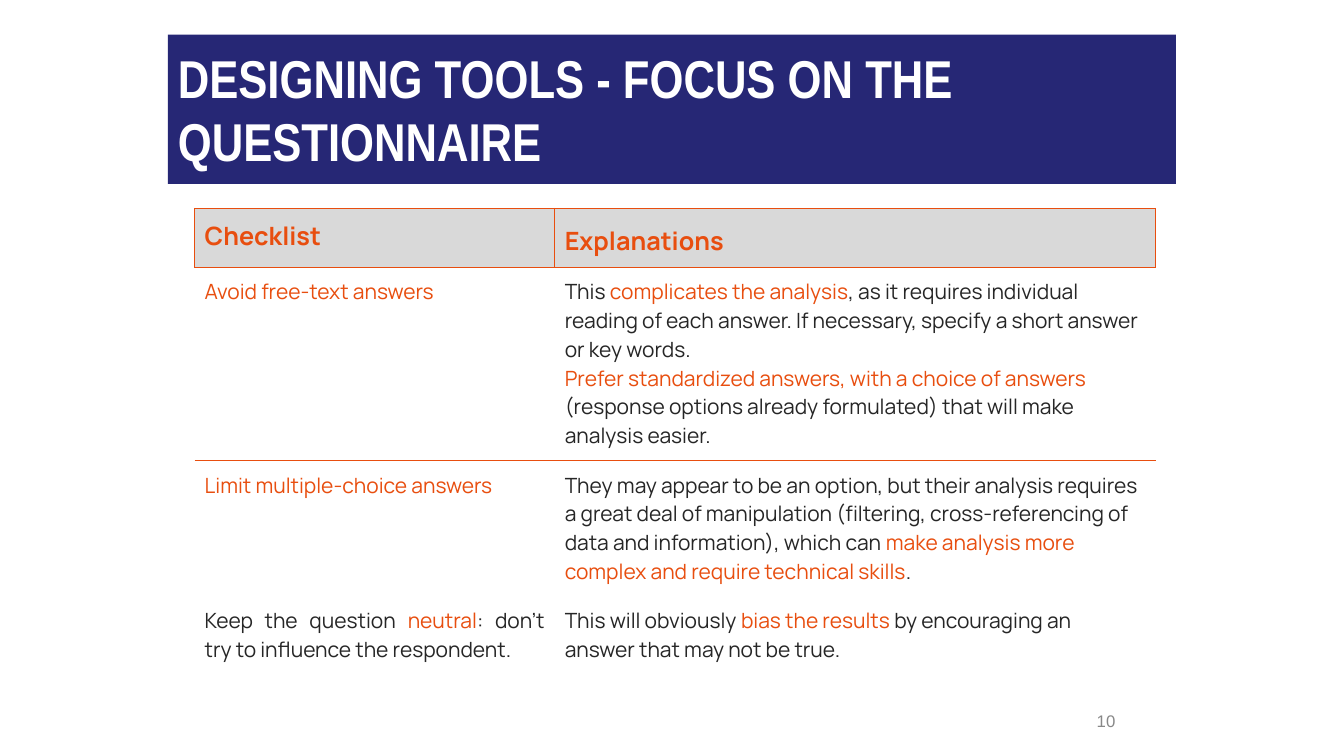
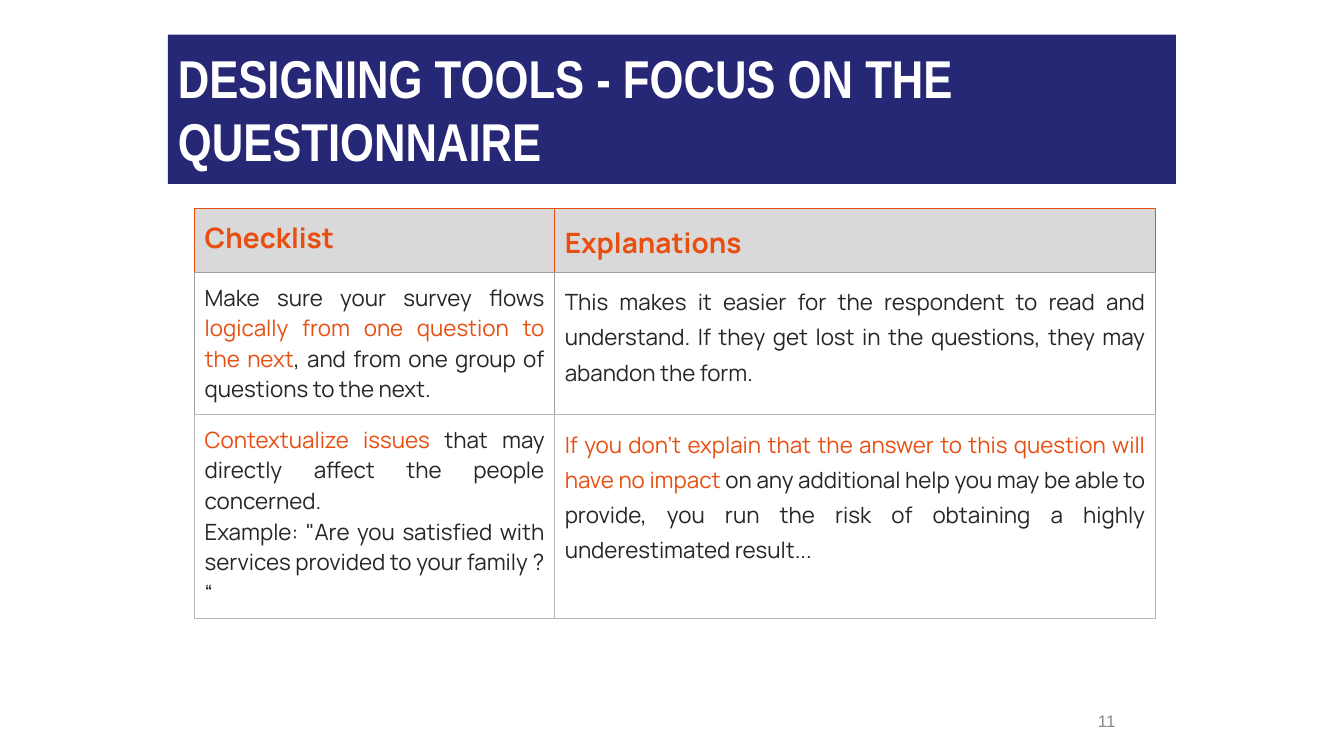
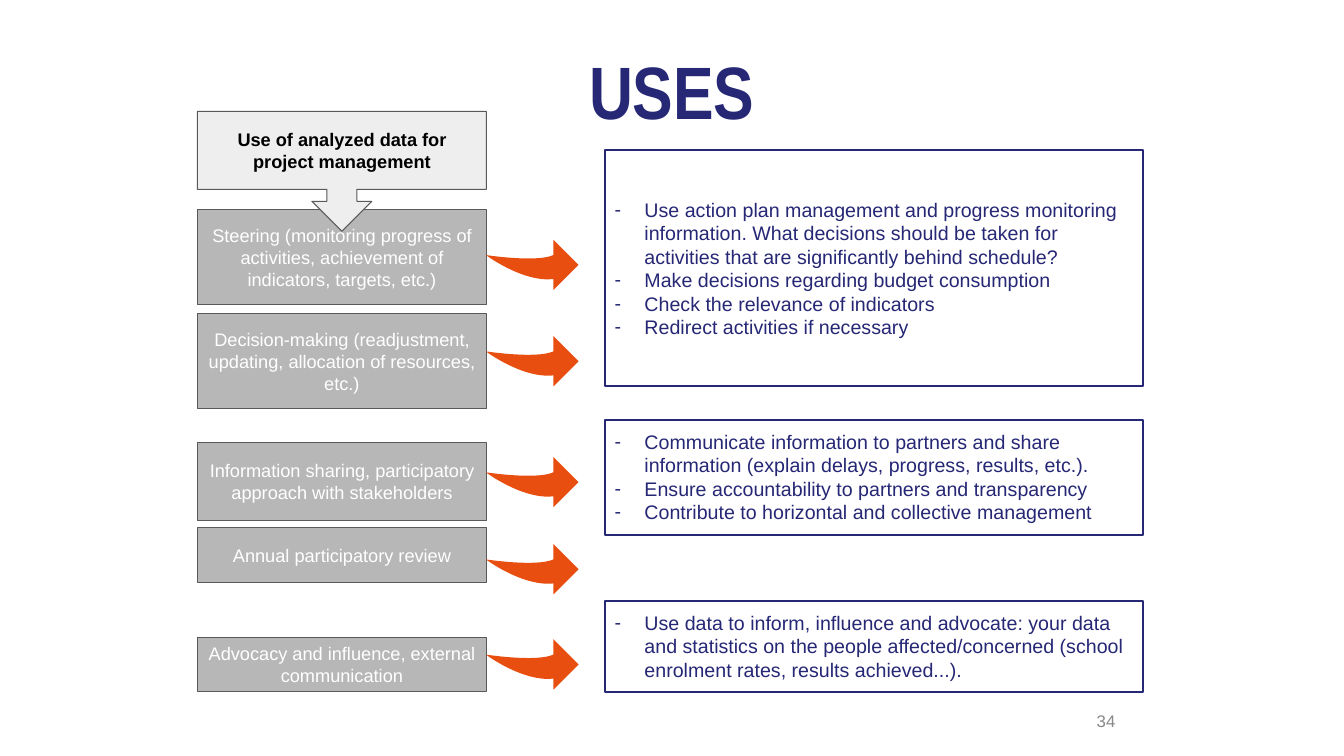
"""Build three training slides: two questionnaire checklists and a data uses chart."""
from dataclasses import dataclass
from typing import Optional

import pptx
import pptx.dml.color
import pptx.enum.shapes
import pptx.enum.text
import pptx.oxml
import pptx.oxml.ns
import pptx.util

Pt = pptx.util.Pt
ALIGN = pptx.enum.text.PP_ALIGN
ANCHOR = pptx.enum.text.MSO_ANCHOR
SHAPE = pptx.enum.shapes.MSO_SHAPE

COLORS = {
    "navy": "262775", "orange": "E84E0F", "white": "FFFFFF", "black": "000000",
    "text": "262626", "number": "888888", "header": "D9D9D9", "box": "B7B7B7",
    "callout": "EEEEEE", "outline": "595959", "rule": "9E9E9E",
}
MARGIN = 7.2
TITLE_LEFT, TITLE_TOP, TITLE_WIDTH = 120, 24.8, 720
TABLE_LEFT, TABLE_TOP, COLUMN_WIDTHS = 139, 148.7, (257.2, 429.3)
USE_LEFT, USE_WIDTH = 141, 206.4
ARROW_LEFT = 347.1
PANEL_LEFT, PANEL_WIDTH = 432, 384.5
BULLET_INDENT = 21.3
CHECKLIST_TITLE = "DESIGNING TOOLS - FOCUS ON THE QUESTIONNAIRE"


@dataclass(frozen=True)
class Cell:
    """Table cell whose paragraphs put accented words between bars."""
    paragraphs: tuple[str, ...]
    align: ALIGN = ALIGN.LEFT
    spacing: float = 1.0


@dataclass(frozen=True)
class Row:
    """Table row with the colour names of its rules."""
    height: float
    cells: tuple[Cell, Cell]
    top: Optional[str] = None
    bottom: Optional[str] = None
    sides: Optional[str] = None


@dataclass(frozen=True)
class Checklist:
    """Checklist slide content."""
    number: int
    header_size: float
    header_height: float
    body_size: float
    header_bottom: str
    rows: tuple[Row, ...]


@dataclass(frozen=True)
class Use:
    """Use of data with the top of its arrow."""
    text: str
    top: float
    height: float
    arrow_top: float


@dataclass(frozen=True)
class Panel:
    """Outlined list of actions."""
    top: float
    height: float
    items: tuple[str, ...]
    anchor: ANCHOR = ANCHOR.TOP


CHECKLISTS = (
    Checklist(10, 18, 42.4, 15, "orange", (
        Row(138, (
            Cell(("|Avoid free-text answers",)),
            Cell(("This |complicates the analysis|, as it requires individual reading of each answer. "
                  "If necessary, specify a short answer or key words.",
                  "|Prefer standardized answers, with a choice of answers |(response options already "
                  "formulated) that will make analysis easier."))),
            top="orange", bottom="orange"),
        Row(96.8, (
            Cell(("|Limit multiple-choice answers",)),
            Cell(("They may appear to be an option, but their analysis requires a great deal of manipulation "
                  "(filtering, cross-referencing of data and information), which can "
                  "|make analysis more complex and require technical skills|.",))),
            top="orange"),
        Row(55.6, (
            Cell(("Keep the question |neutral|: don't try to influence the respondent.",), ALIGN.JUSTIFY),
            Cell(("This will obviously |bias the results |by encouraging an answer that may not be true.",)))),
    )),
    Checklist(11, 20, 45.8, 16, "rule", (
        Row(101.6, (
            Cell(("Make sure your survey flows |logically from one question to the next|, "
                  "and from one group of questions to the next.",), ALIGN.JUSTIFY),
            Cell(("This makes it easier for the respondent to read and understand. If they get lost "
                  "in the questions, they may abandon the form.",), ALIGN.JUSTIFY, 1.15)),
            top="rule", bottom="box", sides="rule"),
        Row(145.7, (
            Cell(("|Contextualize issues |that may directly affect the people concerned.",
                  'Example: "Are you satisfied with services provided to your family ? “'), ALIGN.JUSTIFY),
            Cell(("|If you don't explain that the answer to this question will have no impact |on any "
                  "additional help you may be able to provide, you run the risk of obtaining a highly "
                  "underestimated result...",), ALIGN.JUSTIFY, 1.15)),
            top="box", bottom="box", sides="box"),
    )),
)

USES = (
    Use("Steering (monitoring progress of activities, achievement of indicators, targets, etc.)",
        149.8, 67.7, 171.2),
    Use("Decision-making (readjustment, updating, allocation of resources, etc.)", 224, 67.7, 240),
    Use("Information sharing, participatory approach with stakeholders", 316.2, 55.5, 326.4),
    Use("Annual participatory review", 377.1, 38.9, 388.6),
    Use("Advocacy and influence, external communication", 455.2, 38.9, 456.6),
)

PANELS = (
    Panel(107.3, 168.5, (
        "Use action plan management and progress monitoring information. What decisions should be taken "
        "for activities that are significantly behind schedule?",
        "Make decisions regarding budget consumption",
        "Check the relevance of indicators",
        "Redirect activities if necessary",
    ), ANCHOR.MIDDLE),
    Panel(299.8, 82.2, (
        "Communicate information to partners and share information (explain delays, progress, results, etc.).",
        "Ensure accountability to partners and transparency",
        "Contribute to horizontal and collective management",
    )),
    Panel(429.1, 65.5, (
        "Use data to inform, influence and advocate: your data and statistics on the people "
        "affected/concerned (school enrolment rates, results achieved...).",
    )),
)


def rgb(name: str) -> pptx.dml.color.RGBColor:
    """Return the named colour."""
    return pptx.dml.color.RGBColor.from_string(COLORS[name])


def add_xml(parent, tag: str, **attributes: str):
    """Append a drawing element to the parent and return it."""
    child = parent.makeelement(pptx.oxml.ns.qn(tag), attributes)
    parent.append(child)
    return child


def write_text(frame, paragraphs: tuple[str, ...], *, size: float, color: str, font: str = "Arial",
               bold: bool = False, align: ALIGN = ALIGN.LEFT, spacing: float = 1.0,
               accent: str = "orange", bullet: Optional[str] = None) -> None:
    """Write paragraphs, giving the words between bars the accent colour."""
    frame.word_wrap = True
    for index, text in enumerate(paragraphs):
        para = frame.add_paragraph() if index else frame.paragraphs[0]
        para.alignment = align
        para.line_spacing = spacing
        if bullet:
            properties = para._p.get_or_add_pPr()
            properties.set("marL", str(Pt(BULLET_INDENT)))
            properties.set("indent", str(-Pt(BULLET_INDENT)))
            add_xml(add_xml(properties, "a:buClr"), "a:srgbClr", val=COLORS[color])
            add_xml(properties, "a:buFont", typeface=font)
            add_xml(properties, "a:buChar", char=bullet)
        for position, words in enumerate(text.split("|")):
            if not words:
                continue
            span = para.add_run()
            span.text = words
            span.font.name = font
            span.font.size = Pt(size)
            span.font.bold = bold
            span.font.color.rgb = rgb(accent if position % 2 else color)


def set_margins(target, horizontal: float = MARGIN, vertical: float = MARGIN) -> None:
    """Set the inner margins of a text frame or table cell."""
    target.margin_left = target.margin_right = Pt(horizontal)
    target.margin_top = target.margin_bottom = Pt(vertical)


def style_shape(shape, fill: Optional[str], line: Optional[str], width: float = 0.75) -> None:
    """Set fill and line, without shadow."""
    shape.shadow.inherit = False
    if fill:
        shape.fill.solid()
        shape.fill.fore_color.rgb = rgb(fill)
    else:
        shape.fill.background()
    if line:
        shape.line.color.rgb = rgb(line)
        shape.line.width = Pt(width)
    else:
        shape.line.fill.background()


def add_box(page, left: float, top: float, width: float, height: float, paragraphs: tuple[str, ...], *,
            kind: Optional[SHAPE] = SHAPE.RECTANGLE, fill: Optional[str] = None, line: Optional[str] = None,
            line_width: float = 0.75, anchor: ANCHOR = ANCHOR.MIDDLE, **text_format):
    """Add a shape holding text, or a text box if it has no kind, and return it."""
    place = Pt(left), Pt(top), Pt(width), Pt(height)
    box = page.shapes.add_shape(kind, *place) if kind else page.shapes.add_textbox(*place)
    style_shape(box, fill, line, line_width)
    set_margins(box.text_frame)
    box.text_frame.vertical_anchor = anchor
    write_text(box.text_frame, paragraphs, **text_format)
    return box


def add_page(deck, number: int, title: str, *, height: float, size: float, color: str,
             kind: Optional[SHAPE] = None, fill: Optional[str] = None, align: ALIGN = ALIGN.LEFT):
    """Add a blank page with its title and number."""
    page = deck.slides.add_slide(deck.slide_layouts[6])
    add_box(page, TITLE_LEFT, TITLE_TOP, TITLE_WIDTH, height, (title,), kind=kind, fill=fill,
            anchor=ANCHOR.TOP, size=size, color=color, font="Arial Narrow", bold=True, align=align)
    number_box = add_box(page, 636, 500.4, 167.8, 28.8, (str(number),), kind=None,
                         size=12, color="number", align=ALIGN.RIGHT)
    set_margins(number_box.text_frame, vertical=3.6)
    return page


def set_borders(cell, row: Row) -> None:
    """Draw the rules of a row around one of its cells."""
    properties = cell._tc.get_or_add_tcPr()
    sides = (("a:lnL", row.sides), ("a:lnR", row.sides), ("a:lnT", row.top), ("a:lnB", row.bottom))
    for index, (tag, color) in enumerate(sides):
        line = properties.makeelement(pptx.oxml.ns.qn(tag), {"w": str(Pt(0.75))})
        properties.insert(index, line)
        if color:
            add_xml(add_xml(line, "a:solidFill"), "a:srgbClr", val=COLORS[color])
        else:
            add_xml(line, "a:noFill")


def build_checklist(deck, checklist: Checklist) -> None:
    """Build a page with a two-column checklist."""
    page = add_page(deck, checklist.number, CHECKLIST_TITLE, height=106.5, size=38, color="white",
                    kind=SHAPE.RECTANGLE, fill="navy")
    header = Row(checklist.header_height, (Cell(("|Checklist",)), Cell(("|Explanations",), spacing=1.15)),
                 top="orange", bottom=checklist.header_bottom, sides="orange")
    rows = (header, *checklist.rows)
    table = page.shapes.add_table(len(rows), len(COLUMN_WIDTHS), Pt(TABLE_LEFT), Pt(TABLE_TOP),
                                  Pt(sum(COLUMN_WIDTHS)), Pt(sum(row.height for row in rows))).table
    table.first_row = table.horz_banding = False
    for column, width in zip(table.columns, COLUMN_WIDTHS):
        column.width = Pt(width)
    for row_index, row in enumerate(rows):
        is_header = row is header
        table.rows[row_index].height = Pt(row.height)
        for column_index, content in enumerate(row.cells):
            cell = table.cell(row_index, column_index)
            set_margins(cell)
            if is_header:
                cell.fill.solid()
                cell.fill.fore_color.rgb = rgb("header")
            else:
                cell.fill.background()
            set_borders(cell, row)
            write_text(cell.text_frame, content.paragraphs, font="Manrope", color="text", bold=is_header,
                       size=checklist.header_size if is_header else checklist.body_size,
                       align=content.align, spacing=content.spacing)


def bend_segment(segment, *controls: tuple[float, float]) -> None:
    """Turn a straight outline segment into a cubic curve with two control points."""
    segment.tag = pptx.oxml.ns.qn("a:cubicBezTo")
    for index, (x, y) in enumerate(controls):
        point = segment.makeelement(pptx.oxml.ns.qn("a:pt"), {"x": str(Pt(x)), "y": str(Pt(y))})
        segment.insert(index, point)


def add_swoosh(page, left: float, top: float) -> None:
    """Add a curved arrow that points right."""
    outline = ((66.2, 18), (48.2, 0), (48.2, 11), (0, 11), (48.2, 28.2), (48.2, 36))
    points = [(Pt(left + x), Pt(top + y)) for x, y in outline]
    builder = page.shapes.build_freeform(*points[0])
    builder.add_line_segments(points[1:], close=True)
    swoosh = builder.convert_to_shape()
    segments = list(swoosh._element.iter(pptx.oxml.ns.qn("a:lnTo")))
    bend_segment(segments[2], (36, 16.5), (0, 11))
    bend_segment(segments[3], (0, 11), (26, 30.5))
    style_shape(swoosh, "orange", None)


def build_uses(deck) -> None:
    """Build the page that links uses of data to actions."""
    page = add_page(deck, 34, "USES", height=78.5, size=53, color="navy", align=ALIGN.CENTER)
    for use in USES:
        add_box(page, USE_LEFT, use.top, USE_WIDTH, use.height, (use.text,), fill="box", line="outline",
                size=13, color="white", align=ALIGN.CENTER)
        add_swoosh(page, ARROW_LEFT, use.arrow_top)
    callout = add_box(page, USE_LEFT, 79.6, USE_WIDTH, 85.6, ("Use of analyzed data for project management",),
                      kind=SHAPE.DOWN_ARROW_CALLOUT, fill="callout", line="outline",
                      size=13, color="black", bold=True, align=ALIGN.CENTER)
    for index, value in enumerate((0.25, 0.25, 0.25, 0.65)):
        callout.adjustments[index] = value
    for panel in PANELS:
        add_box(page, PANEL_LEFT, panel.top, PANEL_WIDTH, panel.height, panel.items, line="navy",
                line_width=1.5, anchor=panel.anchor, size=14, color="navy", bullet="-")


def main() -> None:
    """Build and save the deck."""
    deck = pptx.Presentation()
    deck.slide_width, deck.slide_height = Pt(960), Pt(540)
    for checklist in CHECKLISTS:
        build_checklist(deck, checklist)
    build_uses(deck)
    deck.save("out.pptx")


if __name__ == "__main__":
    main()
